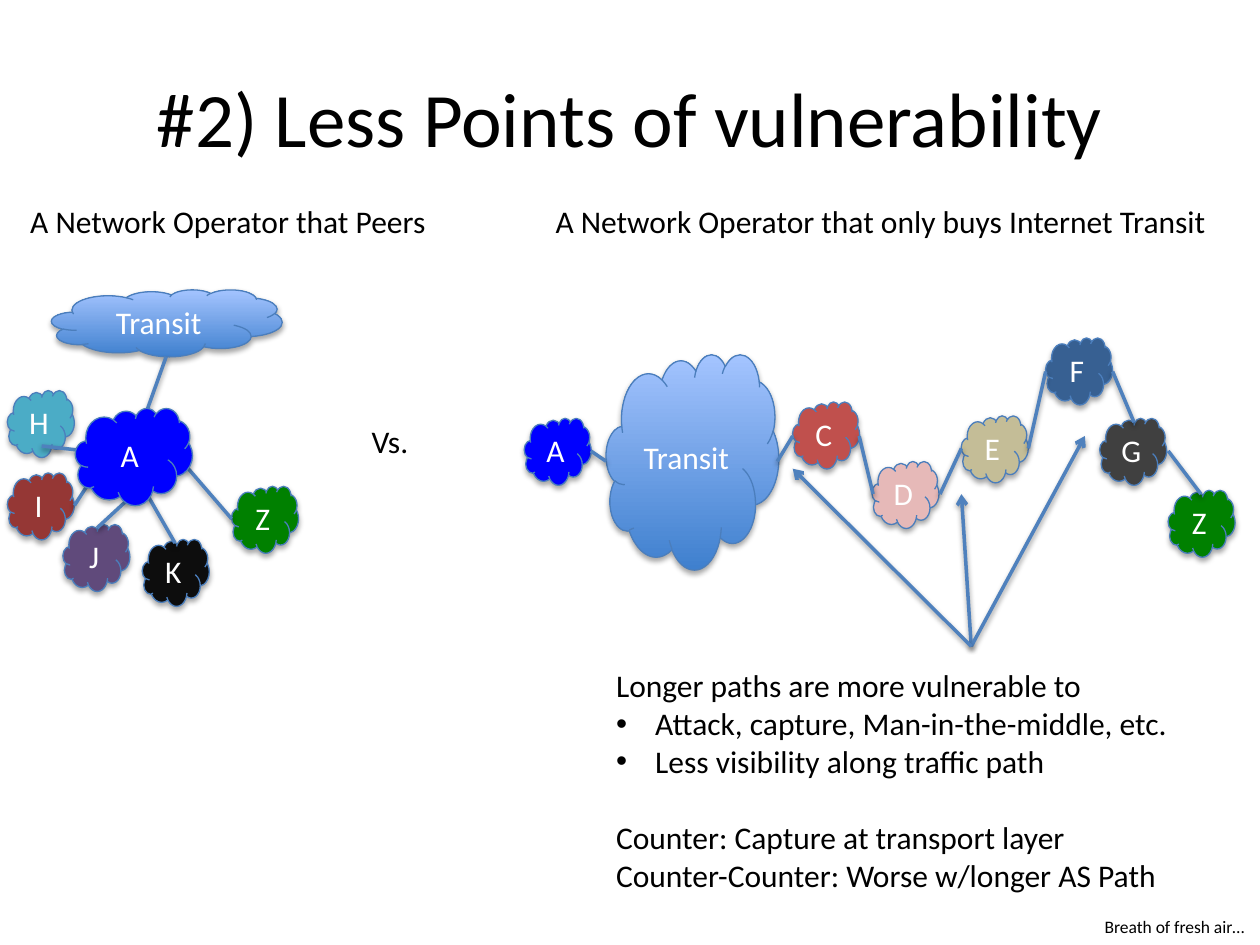
from dataclasses import dataclass

from lxml import etree
from pptx import Presentation
from pptx.dml.color import RGBColor
from pptx.enum.shapes import MSO_CONNECTOR, MSO_SHAPE
from pptx.enum.text import MSO_ANCHOR, PP_ALIGN
from pptx.oxml.ns import qn
from pptx.util import Cm, Pt

CLOUD = MSO_SHAPE.CLOUD
STRAIGHT = MSO_CONNECTOR.STRAIGHT
MIDDLE = MSO_ANCHOR.MIDDLE
LEFT, CENTER = PP_ALIGN.LEFT, PP_ALIGN.CENTER


@dataclass(frozen=True)
class Theme:
    """Colours, font and type sizes of the slide."""
    font: str = "Calibri"
    title: int = 44
    body: int = 18
    small: int = 10
    ink: str = "000000"
    on_cloud: str = "FFFFFF"
    outline: str = "4B7EBC"
    link: str = "4F81BD"
    transit: tuple = ("3F80CE", "A4C4FF")
    operator: str = "0000FF"
    target: str = "008000"


THEME = Theme()
NODE = 1.35

PEERS = [
    ("K", 2.87, 10.87, "0D0D0D"),
    ("J", 1.27, 10.57, "604A7B"),
    ("Z", 4.67, 9.8, THEME.target),
    ("I", 0.15, 9.53, "953735"),
    ("H", 0.15, 7.87, "4BACC6"),
]
PATH_NODES = [
    ("A", 10.57, 8.43, THEME.operator),
    ("C", 15.98, 8.1, "C0504D"),
    ("D", 17.58, 9.3, "E6B9B8"),
    ("E", 19.38, 8.38, "C4BD97"),
    ("F", 21.08, 6.81, "376092"),
    ("G", 22.17, 8.43, "404040"),
    ("Z", 23.55, 9.88, THEME.target),
]
PEER_LINKS = [
    ((3.35, 7.19), (2.87, 8.53)),
    ((4.67, 10.46), (3.53, 9.14)),
    ((3.53, 10.95), (2.87, 9.8)),
    ((2.18, 9.14), (0.84, 8.99)),
    ((2.18, 9.14), (1.5, 10.19)),
    ((1.96, 10.64), (2.87, 9.8)),
]
PATH_LINKS = [
    ((11.91, 9.09), (12.22, 9.3)),
    ((15.67, 9.3), (15.98, 8.79)),
    ((17.32, 8.79), (17.6, 9.96)),
    ((19.38, 9.04), (18.95, 9.96)),
    ((20.73, 9.04), (21.08, 7.49)),
    ((22.43, 7.49), (22.86, 8.51)),
    ((23.55, 9.09), (24.21, 9.96)),
]
WEAK_SPOT_ORIGIN = (19.58, 13.03)
WEAK_SPOTS = [(19.38, 9.96), (21.87, 8.79), (15.98, 9.45)]


def color(code):
    """Turn a hex code into a colour."""
    return RGBColor.from_string(code)


def add_span(para, text, size, ink):
    """Add one formatted run to a paragraph."""
    span = para.add_run()
    span.text = text
    span.font.name = THEME.font
    span.font.size = Pt(size)
    span.font.color.rgb = color(ink)


def add_shadow(item, distance, opacity):
    """Give a shape or connector a soft shadow falling straight down."""
    effects = etree.SubElement(item._element.spPr, qn("a:effectLst"))
    shadow = etree.SubElement(effects, qn("a:outerShdw"), blurRad=str(Pt(3.1)),
                              dist=str(Pt(distance)), dir="5400000", rotWithShape="0")
    black = etree.SubElement(shadow, qn("a:srgbClr"), val="000000")
    etree.SubElement(black, qn("a:alpha"), val=str(opacity * 1000))


def add_cloud(page, label, left, top, fill, width=NODE, height=NODE):
    """Add a labelled cloud with a plain fill, or a vertical gradient for a pair."""
    cloud = page.shapes.add_shape(CLOUD, Cm(left), Cm(top), Cm(width), Cm(height))
    if isinstance(fill, tuple):
        cloud.fill.gradient()
        cloud.fill.gradient_angle = 90
        for stop, code in zip(cloud.fill.gradient_stops, fill):
            stop.color.rgb = color(code)
    else:
        cloud.fill.solid()
        cloud.fill.fore_color.rgb = color(fill)
    cloud.line.color.rgb = color(THEME.outline)
    cloud.line.width = Pt(0.75)
    add_shadow(cloud, 1.8, 35)
    cloud.text_frame.vertical_anchor = MIDDLE
    para = cloud.text_frame.paragraphs[0]
    para.alignment = CENTER
    add_span(para, label, THEME.body, THEME.on_cloud)


def add_link(page, start, end, arrow=False):
    """Add a straight link, with an arrowhead at its end if wanted."""
    link = page.shapes.add_connector(STRAIGHT, *map(Cm, start + end))
    link.line.color.rgb = color(THEME.link)
    link.line.width = Pt(2)
    if arrow:
        etree.SubElement(link.line._get_or_add_ln(), qn("a:tailEnd"), type="arrow")
    add_shadow(link, 1.6, 38)


def add_text(page, place, lines, size=THEME.body, align=LEFT, wrap=False):
    """Add a text box with one paragraph a line and return its paragraphs."""
    box = page.shapes.add_textbox(*map(Cm, place))
    frame = box.text_frame
    frame.word_wrap = wrap
    if wrap:
        frame.vertical_anchor = MIDDLE
    for number, line in enumerate(lines):
        para = frame.add_paragraph() if number else frame.paragraphs[0]
        para.alignment = align
        add_span(para, line, size, THEME.ink)
    return frame.paragraphs


def add_bullet(para):
    """Turn a paragraph into a bullet with a hanging indent."""
    props = para._p.get_or_add_pPr()
    props.set("marL", str(Cm(0.79)))
    props.set("indent", str(-Cm(0.79)))
    etree.SubElement(props, qn("a:buFont"), typeface="Arial")
    etree.SubElement(props, qn("a:buChar"), char="•")


def add_argument(page):
    """Add the argument against long paths."""
    paras = add_text(page, (12.17, 13.31, 11.73, 4.88), [
        "Longer paths are more vulnerable to",
        "Attack, capture, Man-in-the-middle, etc.",
        "Less visibility along traffic path",
        "Counter: Capture at transport layer",
        "Counter-Counter: Worse w/longer AS Path",
    ])
    for para in paras[1:3]:
        add_bullet(para)
    paras[3].space_before = Pt(22)


def main():
    """Build the slide and save the deck."""
    deck = Presentation()
    deck.slide_width, deck.slide_height = Cm(25.4), Cm(19.05)
    page = deck.slides.add_slide(deck.slide_layouts[6])

    add_text(page, (1.27, 0.76, 22.86, 3.18), ["#2) Less Points of vulnerability"],
             THEME.title, CENTER, wrap=True)
    add_text(page, (0.36, 3.94, 8.64, 1.02), ["A Network Operator that Peers"])
    add_text(page, (10.95, 3.94, 13.87, 1.02),
             ["A Network Operator that only buys Internet Transit"])
    add_text(page, (7.24, 8.38, 1.3, 1.02), ["Vs."])

    add_cloud(page, "Transit", 12.22, 7.14, THEME.transit, 3.48, 4.34)
    add_cloud(page, "Transit", 1.04, 5.84, THEME.transit, 4.65, 1.35)
    for node in PATH_NODES + PEERS:
        add_cloud(page, *node)
    for start, end in PEER_LINKS + PATH_LINKS:
        add_link(page, start, end)
    add_cloud(page, "A", 1.52, 8.23, THEME.operator, 2.36, 1.96)
    for spot in WEAK_SPOTS:
        add_link(page, WEAK_SPOT_ORIGIN, spot, arrow=True)

    add_argument(page)
    add_text(page, (22.02, 18.34, 3.38, 0.69), ["Breath of fresh air…"], THEME.small)
    deck.save("out.pptx")


if __name__ == "__main__":
    main()
